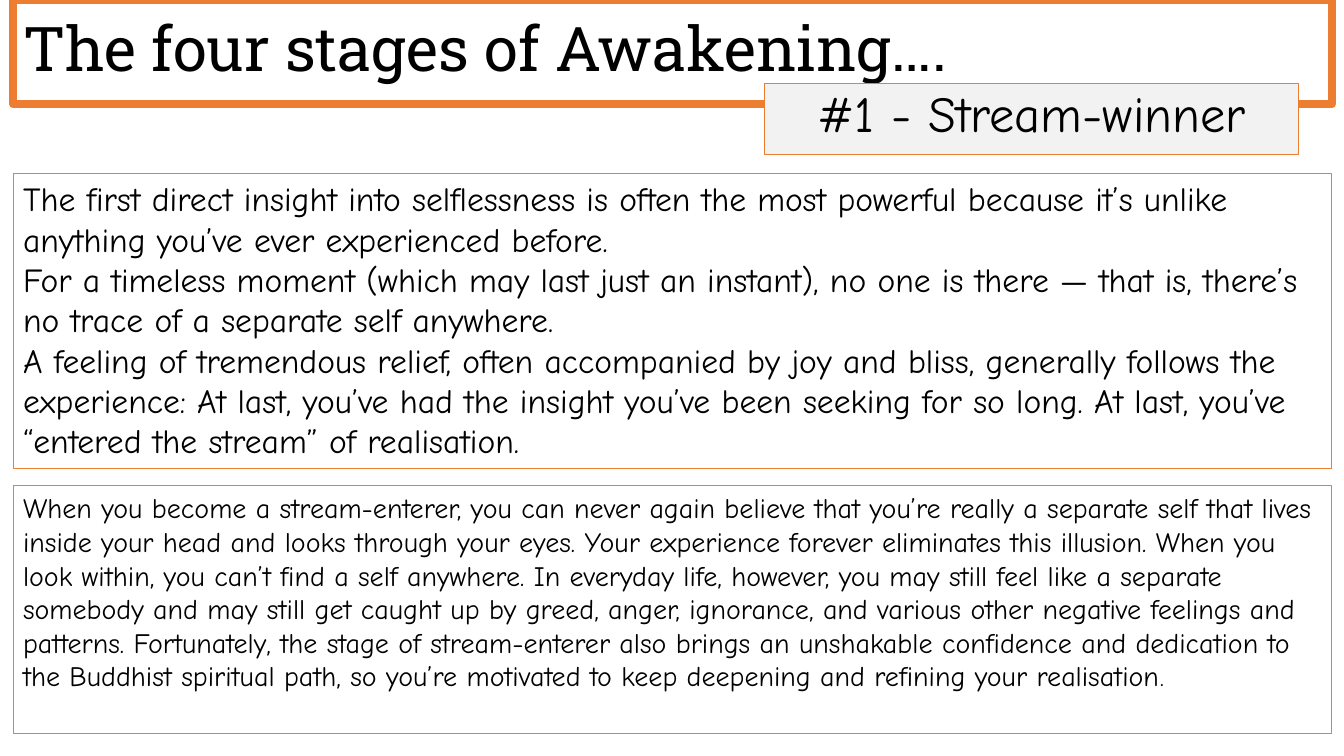
from dataclasses import dataclass

from pptx import Presentation
from pptx import util as u
from pptx.dml.color import RGBColor
from pptx.enum import shapes, text


@dataclass(frozen=True)
class Theme:
    """Colours, fonts and type sizes of the slide."""
    ink: str = "000000"
    edge: str = "ED7D31"
    tint: str = "F2F2F2"
    slab: str = "Roboto Slab"
    hand: str = "Comic Neue"
    title: int = 44
    tag: int = 36
    lead: int = 24
    body: int = 20
    stop: int = 18


class Deck:
    """Hold the theme and the current slide, measured in px of 1/100 inch."""
    PX = 9144

    def __init__(self, theme, wide, high):
        """Open a blank slide of the given size."""
        self.theme = theme
        self.prs = Presentation()
        self.prs.slide_width = self.px(wide)
        self.prs.slide_height = self.px(high)
        self.slide = self.prs.slides.add_slide(self.prs.slide_layouts[6])

    def px(self, size):
        """Turn px into EMU."""
        return u.Emu(size * self.PX)

    def panel(self, area, paras, font, line=0.75, fill=None, frame=None, para=None):
        """Add a framed rectangle whose paragraphs are lists of (words, size)."""
        box = self.slide.shapes.add_shape(
            shapes.MSO_SHAPE.RECTANGLE, *map(self.px, area))
        box.shadow.inherit = False
        box.line.color.rgb = RGBColor.from_string(self.theme.edge)
        box.line.width = u.Pt(line)
        if fill:
            box.fill.solid()
            box.fill.fore_color.rgb = RGBColor.from_string(fill)
        else:
            box.fill.background()
        body = box.text_frame
        self.apply(body, {"word_wrap": True,
                          "vertical_anchor": text.MSO_ANCHOR.TOP, **(frame or {})})
        for i, runs in enumerate(paras):
            item = body.add_paragraph() if i else body.paragraphs[0]
            self.apply(item, {"alignment": text.PP_ALIGN.LEFT, **(para or {})})
            for words, size in runs:
                self.phrase(item, words, size, font)

    def phrase(self, item, words, size, font):
        """Add one styled run to a paragraph."""
        run = item.add_run()
        run.text = words
        self.apply(run.font, {"name": font, "size": u.Pt(size)})
        run.font.color.rgb = RGBColor.from_string(self.theme.ink)

    @staticmethod
    def apply(item, style):
        """Set each format value on an item."""
        for name, value in style.items():
            setattr(item, name, value)


LEAD = (
    "The first direct insight into selflessness is often the most powerful because "
    "it’s unlike anything you’ve ever experienced before.",
    "For a timeless moment (which may last just an instant), no one is there — that "
    "is, there’s no trace of a separate self anywhere.",
    "A feeling of tremendous relief, often accompanied by joy and bliss, generally "
    "follows the experience: At last, you’ve had the insight you’ve been seeking for "
    "so long. At last, you’ve “entered the stream” of realisation.",
)
BODY = (
    "When you become a stream-enterer, you can never again believe that you’re really "
    "a separate self that lives inside your head and looks through your eyes. Your "
    "experience forever eliminates this illusion. When you look within, you can’t find "
    "a self anywhere. In everyday life, however, you may still feel like a separate "
    "somebody and may still get caught up by greed, anger, ignorance, and various other "
    "negative feelings and patterns. Fortunately, the stage of stream-enterer also "
    "brings an unshakable confidence and dedication to the Buddhist spiritual path, so "
    "you’re motivated to keep deepening and refining your realisation"
)


def main():
    """Build and save the slide."""
    theme = Theme()
    deck = Deck(theme, 1333, 750)
    left, wide = 13, 1308
    deck.panel((left, 0, wide, 103), [[("The four stages of Awakening….", theme.title)]],
               theme.slab, line=6, frame={"vertical_anchor": text.MSO_ANCHOR.MIDDLE},
               para={"line_spacing": 0.9})
    deck.panel((758, 83, 530, 70), [[("#1 - Stream-winner", theme.tag)]],
               theme.hand, fill=theme.tint,
               para={"line_spacing": 0.9, "alignment": text.PP_ALIGN.CENTER})
    deck.panel((left, 172, wide, 293), [[(words, theme.lead)] for words in LEAD],
               theme.hand)
    deck.panel((left, 482, wide, 246), [[(BODY, theme.body), (".", theme.stop)]],
               theme.hand)
    deck.prs.save("out.pptx")


if __name__ == "__main__":
    main()
